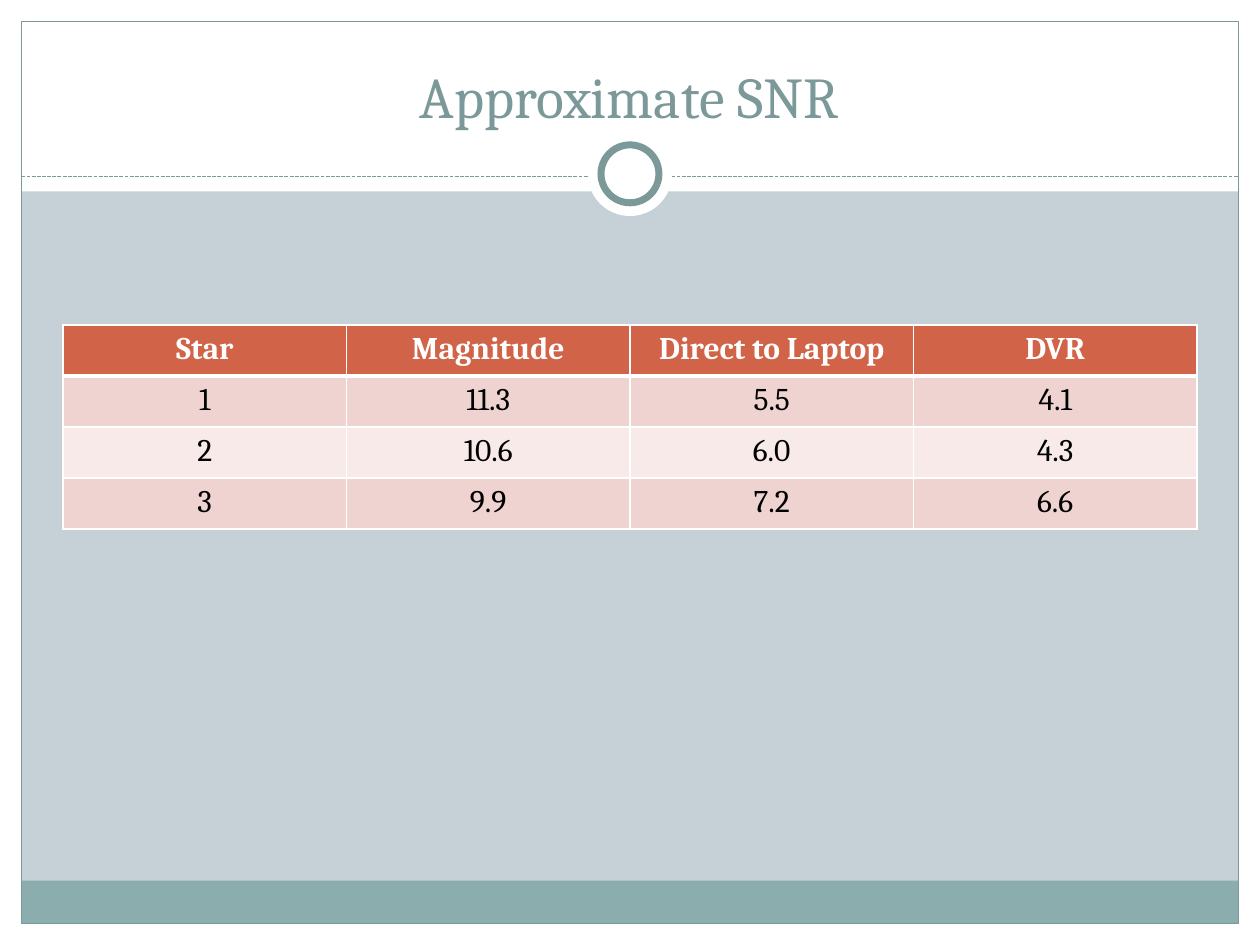
from lxml import etree
from pptx import Presentation
from pptx.dml.color import RGBColor
from pptx.enum.dml import MSO_LINE
from pptx.enum.shapes import MSO_CONNECTOR, MSO_SHAPE
from pptx.enum.text import MSO_ANCHOR, PP_ALIGN
from pptx.oxml.ns import qn
from pptx.util import Inches, Pt

RECT, OVAL = MSO_SHAPE.RECTANGLE, MSO_SHAPE.OVAL
STRAIGHT, DASH = MSO_CONNECTOR.STRAIGHT, MSO_LINE.SQUARE_DOT
CENTER, BOTTOM = PP_ALIGN.CENTER, MSO_ANCHOR.BOTTOM
FONT = "Cambria"
COLORS = {
    "background": "C5D1D7", "white": "FFFFFF", "black": "000000",
    "line": "7C999A", "footer": "8CADAE",
    "header": "D16349", "odd": "EED3D0", "even": "F7EAE9",
}
ROWS = [
    ["Star", "Magnitude", "Direct to Laptop", "DVR"],
    ["1", "11.3", "5.5", "4.1"],
    ["2", "10.6", "6.0", "4.3"],
    ["3", "9.9", "7.2", "6.6"],
]


def rgb(name):
    """Return the named colour."""
    return RGBColor.from_string(COLORS[name])


def add_shape(slide, kind, box, fill=None, line=None, width=0.75):
    """Add a preset shape to a box given in inches."""
    sp = slide.shapes.add_shape(kind, *map(Inches, box))
    sp.shadow.inherit = False
    if fill:
        sp.fill.solid()
        sp.fill.fore_color.rgb = rgb(fill)
    else:
        sp.fill.background()
    if line:
        sp.line.color.rgb = rgb(line)
        sp.line.width = Pt(width)
    else:
        sp.line.fill.background()


def add_divider(slide, left, right, y):
    """Add the dashed line below the title."""
    cxn = slide.shapes.add_connector(
        STRAIGHT, Inches(left), Inches(y), Inches(right), Inches(y))
    cxn.line.color.rgb = rgb("line")
    cxn.line.width = Pt(0.75)
    cxn.line.dash_style = DASH
    etree.SubElement(cxn._element.spPr, qn("a:effectLst"))


def add_frame(slide, width, height, margin=0.17, band=1.52, footer=0.34):
    """Add the white margins, title band, footer bar, outline and ring."""
    right, bottom = width - margin, height - margin
    inner = width - 2 * margin
    for box in ((0, bottom, width, margin), (0, 0, width, band),
                (0, 0, margin, height), (right, 0, margin, height)):
        add_shape(slide, RECT, box, "white")
    add_shape(slide, RECT, (margin, bottom - footer, inner, footer), "footer")
    add_shape(slide, RECT, (margin, margin, inner, height - 2 * margin), line="line")
    add_divider(slide, margin, right, 1.4)
    for size, line in ((0.67, None), (0.46, "line")):
        box = (width / 2 - size / 2, 1.38 - size / 2, size, size)
        add_shape(slide, OVAL, box, "white", line, 4)


def style_text(p, size, color, bold=False):
    """Centre a paragraph and set its font."""
    p.alignment = CENTER
    p.font.name = FONT
    p.font.size = Pt(size)
    p.font.bold = bold
    p.font.color.rgb = rgb(color)


def add_title(slide, box, text):
    """Add the slide title, resting on the bottom of its box."""
    tf = slide.shapes.add_textbox(*map(Inches, box)).text_frame
    tf.word_wrap = True
    tf.vertical_anchor = BOTTOM
    tf.text = text
    style_text(tf.paragraphs[0], 33, "line")


def set_border(cell, side, width):
    """Draw one white cell border; call before filling the cell."""
    ln = etree.SubElement(cell._tc.get_or_add_tcPr(), qn(f"a:ln{side}"), w=str(Pt(width)))
    fill = etree.SubElement(ln, qn("a:solidFill"))
    etree.SubElement(fill, qn("a:srgbClr"), val=COLORS["white"])


def add_snr_table(slide, box, rows):
    """Add the table with a header row and alternating body rows."""
    table = slide.shapes.add_table(len(rows), len(rows[0]), *map(Inches, box)).table
    for i, row in enumerate(rows):
        fill = "header" if i == 0 else "odd" if i % 2 else "even"
        for j, text in enumerate(row):
            cell = table.cell(i, j)
            for side in "LRTB":
                set_border(cell, side, 3 if (i, side) in ((0, "B"), (1, "T")) else 1)
            cell.fill.solid()
            cell.fill.fore_color.rgb = rgb(fill)
            cell.text = text
            style_text(cell.text_frame.paragraphs[0], 18,
                       "black" if i else "white", bold=i == 0)


def main():
    """Build and save the slide."""
    prs = Presentation()
    prs.slide_width, prs.slide_height = Inches(10), Inches(7.5)
    slide = prs.slides.add_slide(prs.slide_layouts[6])
    slide.background.fill.solid()
    slide.background.fill.fore_color.rgb = rgb("background")
    add_frame(slide, 10, 7.5)
    add_title(slide, (0.33, 0.25, 9.33, 0.83), "Approximate SNR")
    add_snr_table(slide, (0.5, 2.58, 9, 1.62), ROWS)
    prs.save("out.pptx")


if __name__ == "__main__":
    main()
